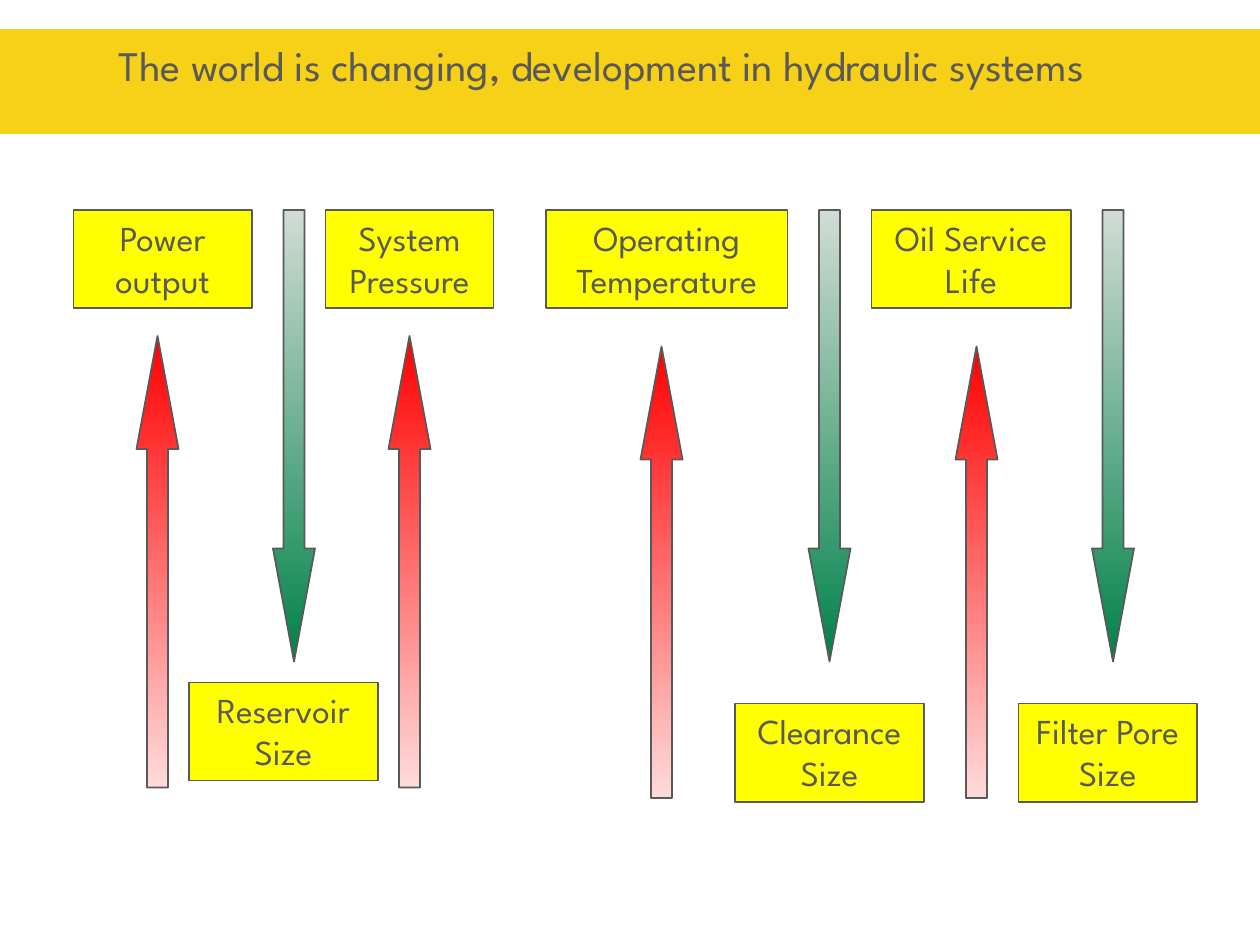
from pptx import Presentation
from pptx import util as u
from pptx.dml.color import RGBColor
from pptx.enum import shapes, text
from pptx.oxml.ns import qn

GOLD = RGBColor(0xF7, 0xD1, 0x17)
YELLOW = RGBColor(0xFF, 0xFF, 0x00)
GREY = RGBColor(0x59, 0x59, 0x59)
RED = RGBColor(0xFF, 0x00, 0x00)
PALE_RED = RGBColor(0xFF, 0xDA, 0xDA)
GREEN = RGBColor(0x00, 0x82, 0x4A)
PALE_GREEN = RGBColor(0xD1, 0xDC, 0xD4)

TITLE = "The world is changing, development in hydraulic systems"
GRID = 2.54 / 12  # cm; positions below are counted in these grid steps
TOP = 20
BOX_HEIGHT = 1.98  # cm
ARROW_WIDTH, ARROW_LENGTH = 4, 43

# label, left, top, width
FACTORS = [
    ("Power output", 7, TOP, 17),
    ("Reservoir Size", 18, 65, 18),
    ("System Pressure", 31, TOP, 16),
    ("Operating Temperature", 52, TOP, 23),
    ("Clearance Size", 70, 67, 18),
    ("Oil Service Life", 83, TOP, 19),
    ("Filter Pore Size", 97, 67, 17),
]
FALLING = [26, 77, 104]
RISING = [(13, 32), (37, 32), (61, 33), (91, 33)]


def grid(steps):
    return u.Cm(steps * GRID)


class TrendSlide:
    font = "League Spartan"
    ink = GREY

    def __init__(self, presentation):
        self.slide = presentation.slides.add_slide(presentation.slide_layouts[5])

    def label(self, shape, words, size, alignment):
        frame = shape.text_frame
        frame.text = words
        frame.word_wrap = True
        frame.auto_size = text.MSO_AUTO_SIZE.SHAPE_TO_FIT_TEXT
        frame.vertical_anchor = text.MSO_ANCHOR.TOP
        paragraph = frame.paragraphs[0]
        paragraph.alignment = alignment
        font = paragraph.runs[0].font
        font.name, font.size = self.font, u.Pt(size)
        font.color.rgb = self.ink

    def paint(self, shape, fill, line, width):
        shape.fill.solid()
        shape.fill.fore_color.rgb = fill
        self.outline(shape, line, width)

    def outline(self, shape, colour, width):
        shape.line.color.rgb = colour
        shape.line.width = u.Pt(width)

    def title(self, words):
        shape = self.slide.shapes.title
        shape.left, shape.top = u.Cm(0), u.Cm(0.64)
        shape.width, shape.height = u.Cm(25.4), u.Cm(1.17)
        self.paint(shape, GOLD, GOLD, 2.9)
        self.label(shape, words, 24, text.PP_ALIGN.LEFT)
        frame = shape.text_frame
        frame.margin_left, frame.margin_top = u.Cm(2.39), u.Cm(0.15)
        frame.margin_right = frame.margin_bottom = 0

    def box(self, words, left, top, width):
        shape = self.slide.shapes.add_shape(
            shapes.MSO_SHAPE.RECTANGLE,
            grid(left), grid(top), grid(width), u.Cm(BOX_HEIGHT))
        shape.shadow.inherit = False
        self.paint(shape, YELLOW, self.ink, 1)
        self.label(shape, words, 20, text.PP_ALIGN.CENTER)

    def arrow(self, left, top, colours, rotation=0):
        """Draw an arrow whose colours run from top to bottom of the slide."""
        shape = self.slide.shapes.add_shape(
            shapes.MSO_SHAPE.UP_ARROW,
            grid(left), grid(top), grid(ARROW_WIDTH), grid(ARROW_LENGTH))
        shape.adjustments[0], shape.adjustments[1] = 0.5, 2.69
        shape.rotation = rotation
        shape.shadow.inherit = False
        shape.fill.gradient()
        shape.fill.gradient_angle = 270
        for stop, position, colour in zip(shape.fill.gradient_stops, (0, 1), colours):
            stop.position = position
            stop.color.rgb = colour
        gradient = shape._element.spPr.find(qn("a:gradFill"))
        gradient.set("rotWithShape", "0")
        self.outline(shape, self.ink, 1)


def main():
    presentation = Presentation()
    presentation.slide_width, presentation.slide_height = u.Cm(25.4), u.Cm(19.05)
    trends = TrendSlide(presentation)
    trends.title(TITLE)
    for factor in FACTORS:
        trends.box(*factor)
    for left in FALLING:
        trends.arrow(left, TOP, (PALE_GREEN, GREEN), rotation=180)
    for left, top in RISING:
        trends.arrow(left, top, (RED, PALE_RED))
    presentation.save("out.pptx")


if __name__ == "__main__":
    main()
